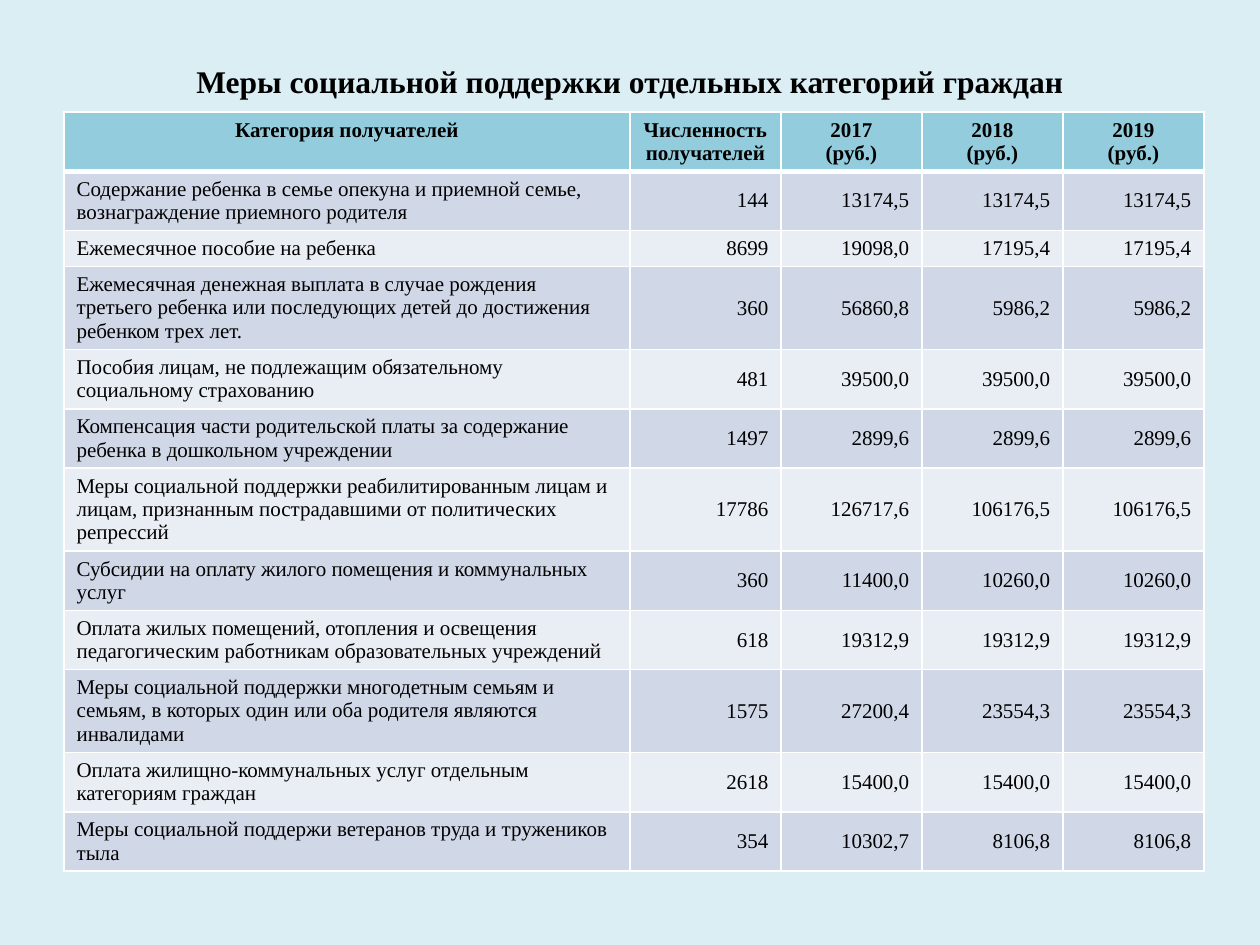
from pptx import Presentation
from pptx.dml.color import RGBColor
from pptx.enum.text import MSO_ANCHOR as Anchor, PP_ALIGN as Align
from pptx.oxml.ns import qn
from pptx.util import Pt
from lxml.etree import SubElement

EMU_PER_PX = 914400 / 126
SLIDE_SIZE = (1260, 945)

BACKGROUND = RGBColor(0xDB, 0xEE, 0xF4)
HEADER_FILL = RGBColor(0x93, 0xCD, 0xDD)
BAND_FILLS = (RGBColor(0xD0, 0xD8, 0xE8), RGBColor(0xE9, 0xED, 0xF4))
BLACK = RGBColor(0, 0, 0)
WHITE = RGBColor(0xFF, 0xFF, 0xFF)

FONT = "Times New Roman"
TITLE_FONT = {"name": FONT, "size": Pt(18), "bold": True}
HEADER_FONT = {"name": FONT, "size": Pt(12), "bold": True}
BODY_FONT = {"name": FONT, "size": Pt(12), "bold": False}

COLUMN_WIDTHS = (566, 151, 141, 141, 141)
ROW_HEIGHTS = {1: 36, 2: 59, 3: 83}  # by number of text lines

TITLE = "Меры социальной поддержки отдельных категорий граждан"
HEADERS = ("Категория получателей", "Численность получателей",
           "2017\n(руб.)", "2018\n(руб.)", "2019\n(руб.)")
# Lines of text, category, recipients, amounts for 2017 to 2019
ROWS = (
    (2, "Содержание ребенка в семье опекуна и приемной семье, вознаграждение приемного родителя",
     "144", "13174,5", "13174,5", "13174,5"),
    (1, "Ежемесячное пособие на ребенка",
     "8699", "19098,0", "17195,4", "17195,4"),
    (3, "Ежемесячная денежная выплата в случае рождения третьего ребенка "
        "или последующих детей до достижения ребенком трех лет.",
     "360", "56860,8", "5986,2", "5986,2"),
    (2, "Пособия лицам, не подлежащим обязательному социальному страхованию",
     "481", "39500,0", "39500,0", "39500,0"),
    (2, "Компенсация части родительской платы за содержание ребенка в дошкольном учреждении",
     "1497", "2899,6", "2899,6", "2899,6"),
    (3, "Меры социальной поддержки реабилитированным лицам и лицам, "
        "признанным пострадавшими от политических репрессий",
     "17786", "126717,6", "106176,5", "106176,5"),
    (2, "Субсидии на оплату жилого помещения и коммунальных услуг",
     "360", "11400,0", "10260,0", "10260,0"),
    (2, "Оплата жилых помещений, отопления и освещения "
        "педагогическим работникам образовательных учреждений",
     "618", "19312,9", "19312,9", "19312,9"),
    (3, "Меры социальной поддержки многодетным семьям и семьям, "
        "в которых один или оба родителя являются инвалидами",
     "1575", "27200,4", "23554,3", "23554,3"),
    (2, "Оплата жилищно-коммунальных услуг отдельным категориям граждан",
     "2618", "15400,0", "15400,0", "15400,0"),
    (2, "Меры социальной поддержи ветеранов труда и тружеников тыла",
     "354", "10302,7", "8106,8", "8106,8"),
)


def px(length):
    return round(length * EMU_PER_PX)


def write_text(text_frame, text, font_format, alignment, anchor):
    text_frame.text = text
    text_frame.vertical_anchor = anchor
    for paragraph in text_frame.paragraphs:
        paragraph.alignment = alignment
        for run in paragraph.runs:
            for name, value in font_format.items():
                setattr(run.font, name, value)
            run.font.color.rgb = BLACK


def add_title(slide):
    title = slide.shapes.title
    place = {"left": 63, "top": 26, "width": 1134, "height": 110}
    for name, value in place.items():
        setattr(title, name, px(value))
    write_text(title.text_frame, TITLE, TITLE_FONT, Align.CENTER, Anchor.MIDDLE)


def set_borders(cell, bottom_width):
    properties = cell._tc.get_or_add_tcPr()
    widths = {"a:lnL": 1, "a:lnR": 1, "a:lnT": 1, "a:lnB": bottom_width}
    for index, (tag, width) in enumerate(widths.items()):
        line = SubElement(properties, qn(tag), w=str(Pt(width)))
        fill = SubElement(line, qn("a:solidFill"))
        SubElement(fill, qn("a:srgbClr"), val=str(WHITE))
        properties.insert(index, line)  # borders come before the fill


def format_cell(cell, text, font_format, alignment, anchor, fill, bottom_width=1):
    write_text(cell.text_frame, text, font_format, alignment, anchor)
    cell.vertical_anchor = anchor
    cell.fill.solid()
    cell.fill.fore_color.rgb = fill
    set_borders(cell, bottom_width)


def add_support_table(slide):
    heights = [ROW_HEIGHTS[2]] + [ROW_HEIGHTS[row[0]] for row in ROWS]
    table = slide.shapes.add_table(
        len(heights), len(COLUMN_WIDTHS), px(64), px(112),
        px(sum(COLUMN_WIDTHS)), px(sum(heights))).table
    for column, width in zip(table.columns, COLUMN_WIDTHS):
        column.width = px(width)
    for row, height in zip(table.rows, heights):
        row.height = px(height)

    # Header row
    for column, text in enumerate(HEADERS):
        format_cell(table.cell(0, column), text, HEADER_FONT,
                    Align.CENTER, Anchor.TOP, HEADER_FILL, bottom_width=3)

    # Banded rows: category on the left, numbers on the right
    for index, (_, *texts) in enumerate(ROWS):
        for column, text in enumerate(texts):
            alignment, anchor = ((Align.RIGHT, Anchor.MIDDLE) if column
                                 else (Align.LEFT, Anchor.TOP))
            format_cell(table.cell(index + 1, column), text, BODY_FONT,
                        alignment, anchor, BAND_FILLS[index % 2])


def main():
    presentation = Presentation()
    presentation.slide_width, presentation.slide_height = map(px, SLIDE_SIZE)
    slide = presentation.slides.add_slide(presentation.slide_layouts[5])
    slide.background.fill.solid()
    slide.background.fill.fore_color.rgb = BACKGROUND
    add_title(slide)
    add_support_table(slide)
    presentation.save("out.pptx")


if __name__ == "__main__":
    main()
